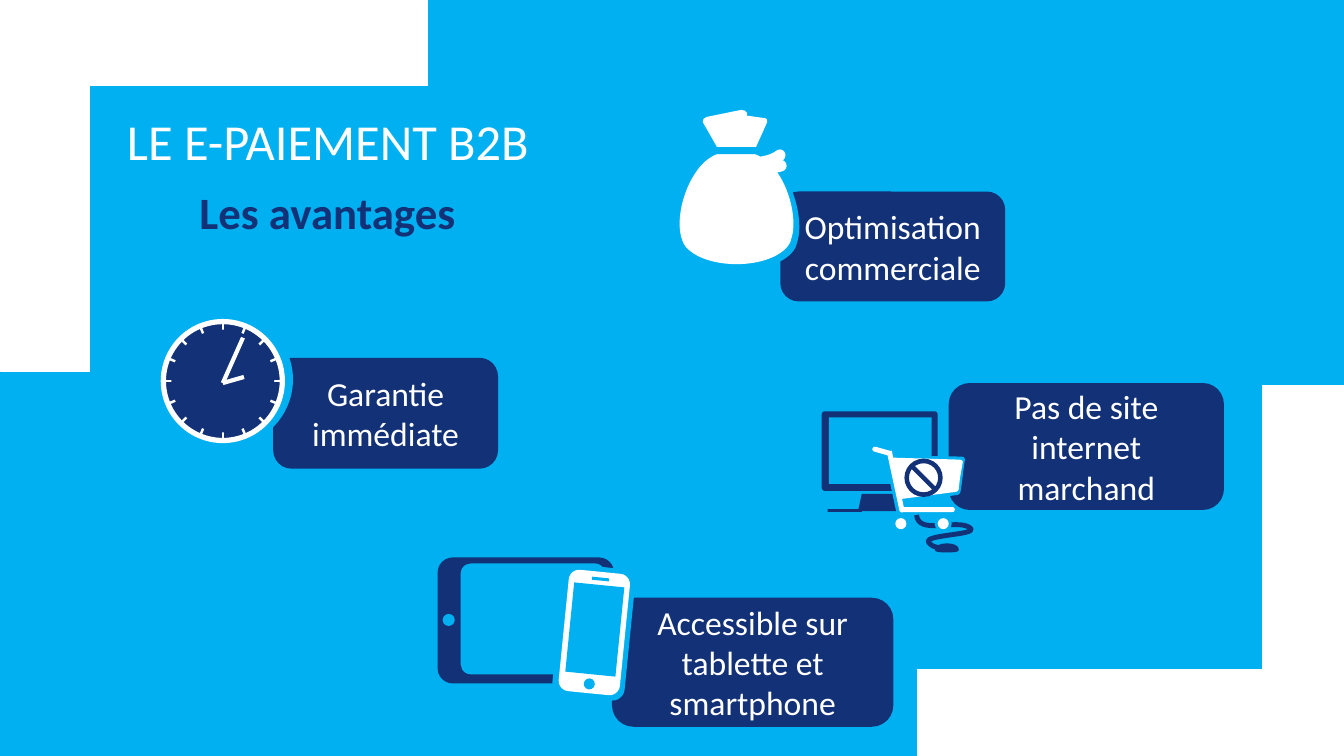
from math import cos, radians, sin

from lxml.etree import SubElement
from pptx import Presentation
from pptx.dml.color import RGBColor
from pptx.enum.shapes import MSO_CONNECTOR, MSO_SHAPE as SH
from pptx.enum.text import MSO_ANCHOR, PP_ALIGN
from pptx.oxml.ns import qn
from pptx.util import Inches, Pt

THEME = {
    "sky": RGBColor(0x00, 0xB0, 0xF0),
    "navy": RGBColor(0x13, 0x31, 0x76),
    "white": RGBColor(0xFF, 0xFF, 0xFF),
    "font": "Calibri",
    "title": Pt(36),
    "subtitle": Pt(32),
    "label": Pt(24),
}
SKY, NAVY, WHITE = THEME["sky"], THEME["navy"], THEME["white"]


def add(parent, kind, x, y, w, h, fill, rot=0, adj=(), line=None, weight=0.5):
    if isinstance(kind, list):
        start, *segs = [[Inches(v) for v in seg] for seg in kind]
        fb = parent.shapes.build_freeform(*start)
        fb.add_line_segments([seg[-2:] for seg in segs], close=fill is not None)
        sp = fb.convert_to_shape()
        left = min(seg[-2] for seg in [start] + segs)
        top = min(seg[-1] for seg in [start] + segs)
        for node, seg in zip(list(sp._element.iter(qn("a:lnTo"))), segs):
            if len(seg) == 6:
                node.remove(node[0])
                curve = SubElement(node.getparent(), qn("a:cubicBezTo"))
                node.getparent().replace(node, curve)
                for a, b in zip(seg[::2], seg[1::2]):
                    SubElement(curve, qn("a:pt"), x=str(a - left), y=str(b - top))
    else:
        sp = parent.shapes.add_shape(kind, Inches(x), Inches(y), Inches(w), Inches(h))
        sp.rotation = rot
        for i, value in enumerate(adj):
            sp.adjustments[i] = value
    sp.shadow.inherit = False
    if fill is None:
        sp.fill.background()
    else:
        sp.fill.solid()
        sp.fill.fore_color.rgb = fill
    if line is None:
        sp.line.fill.background()
    else:
        sp.line.color.rgb = line
        sp.line.width = Pt(weight)
    return sp


def write(sp, text, size, color, bold=False, align=PP_ALIGN.LEFT, anchor=MSO_ANCHOR.MIDDLE):
    tf = sp.text_frame
    tf.word_wrap = True
    tf.vertical_anchor = anchor
    p = tf.paragraphs[0]
    p.alignment = align
    r = p.add_run()
    r.text = text
    r.font.name = THEME["font"]
    r.font.size = size
    r.font.bold = bold
    r.font.color.rgb = color
    return p


prs = Presentation()
prs.slide_width, prs.slide_height = Inches(13.33), Inches(7.5)
s = prs.slides.add_slide(prs.slide_layouts[6])
s.background.fill.solid()
s.background.fill.fore_color.rgb = SKY

corners = ((0, 0, 4.24, 0.85), (12.52, 3.82, 0.81, 3.68), (0, 0, 0.89, 3.68), (9.1, 6.64, 4.23, 0.86))
for box in corners:
    add(s, SH.RECTANGLE, *box, WHITE, line=WHITE)

advantages = (
    ("Accessible sur tablette et smartphone", 6.07, 5.93, 2.79, 1.28),
    ("Pas de site internet marchand", 9.41, 3.8, 2.73, 1.26),
    ("Optimisation commerciale", 7.74, 1.9, 2.23, 1.09),
    ("Garantie immédiate", 2.71, 3.55, 2.23, 1.1),
)
for text, *box in advantages:
    sp = add(s, SH.ROUNDED_RECTANGLE, *box, NAVY)
    write(sp, text, THEME["label"], WHITE, align=PP_ALIGN.CENTER)

tb = s.shapes.add_textbox(Inches(1.16), Inches(1.1), Inches(11.72), Inches(0.67))
p = write(tb, "LE E-PAIEMENT B2B", THEME["title"], WHITE)
p.line_spacing = 0.9
tb = s.shapes.add_textbox(Inches(1.88), Inches(1.84), Inches(3.08), Inches(0.59))
p = write(tb, "Les avantages", THEME["subtitle"], NAVY, bold=True, anchor=MSO_ANCHOR.TOP)
p.line_spacing = 0.9
p.space_before = Pt(10)

bag_parts = (
    (SH.BLOCK_ARC, 6.76, 2.06, 1.09, 0.56, 180, (110.97, 212.13, 0.5)),
    (SH.BLOCK_ARC, 6.52, 1.79, 0.97, 0.46, 287.7, (107.18, 212.13, 0.5)),
    (SH.BLOCK_ARC, 7.12, 1.79, 0.97, 0.46, 72.3, (111.87, 0.82, 0.5)),
    (SH.BLOCK_ARC, 6.86, 1.49, 0.88, 0.79, 0, (108, 2.25, 0.21)),
    (SH.TRAPEZOID, 6.86, 1.56, 0.88, 0.87, 0, ()),
)
bag_flaps = (
    [(6.97, 1.21), (6.97, 1.19, 6.98, 1.16, 7.01, 1.16), (7.35, 1.09), (7.38, 1.09, 7.4, 1.1, 7.41, 1.12),
     (7.38, 1.44), (7.38, 1.46, 7.34, 1.49, 7.32, 1.49), (7.2, 1.51), (7.17, 1.52, 7.14, 1.51, 7.13, 1.49),
     (6.97, 1.21)],
    [(7.17, 1.16), (7.17, 1.14, 7.2, 1.12, 7.22, 1.12), (7.57, 1.17), (7.6, 1.17, 7.62, 1.19, 7.61, 1.21),
     (7.48, 1.5), (7.48, 1.53, 7.44, 1.54, 7.41, 1.54), (7.29, 1.52), (7.26, 1.51, 7.23, 1.5, 7.23, 1.47),
     (7.17, 1.16)],
)
bag_ties = ((7.09, 1.33, 7.24), (7.21, 1.38, 18.85))
for color, k, shift in ((SKY, 1.09, (-0.65, -0.17)), (WHITE, 1, (0, 0))):
    dx, dy = shift
    bag = s.shapes.add_group_shape()
    for kind, x, y, w, h, rot, adj in bag_parts:
        add(bag, kind, k * x + dx, k * y + dy, k * w, k * h, color, rot, adj)
    for flap in bag_flaps:
        outline = [tuple(k * v + shift[i % 2] for i, v in enumerate(seg)) for seg in flap]
        add(bag, outline, 0, 0, 0, 0, color)
    add(bag, SH.RECTANGLE, k * 6.86 + dx, k * 1.46 + dy, k * 0.88, 0.07, SKY)
    for x, y, start in bag_ties:
        tie = add(bag, SH.ARC, k * x + dx, k * y + dy, k * 0.68, k * 0.29, SKY if color == SKY else None,
                  0, (start, 63.1), color, 8.25)
        tie._element.spPr.find(qn("a:ln")).set("cap", "rnd")

clock = s.shapes.add_group_shape()
add(clock, SH.OVAL, 1.53, 3.11, 1.35, 1.31, SKY, line=SKY, weight=3.75)
cx, cy, radius = 2.21, 3.78, 0.59
ticks = []
for n in range(8):
    ux, uy = radius * cos(radians(22.5 * n)), radius * sin(radians(22.5 * n))
    ticks.append((cx - ux, cy - uy, cx + ux, cy + uy))
hands = [(2.21, 3.8, 2.41, 3.35), (2.21, 3.8, 2.42, 3.74)]
for size, rim, strokes, weight in ((2 * radius, WHITE, ticks, 1.75), (1.02, None, hands, 3)):
    add(clock, SH.OVAL, cx - size / 2, cy - size / 2, size, size, NAVY, line=rim, weight=3.75)
    for ends in strokes:
        c = clock.shapes.add_connector(MSO_CONNECTOR.STRAIGHT, *map(Inches, ends))
        c.line.color.rgb = WHITE
        c.line.width = Pt(weight)
        SubElement(c._element.spPr, qn("a:effectLst"))

basket_edge = [
    (8.82, 4.54), (8.82, 4.53, 8.84, 4.52, 8.85, 4.52), (9.54, 4.53), (9.56, 4.53, 9.57, 4.54, 9.57, 4.56),
    (9.55, 4.69, 9.55, 4.73, 9.53, 4.86), (9.53, 4.88, 9.52, 4.91, 9.5, 4.91), (8.93, 4.99),
    (8.92, 4.99, 8.91, 4.97, 8.91, 4.95), (8.82, 4.54)]
basket = [
    (8.84, 4.57), (8.84, 4.55, 8.85, 4.54, 8.86, 4.54), (9.52, 4.56), (9.53, 4.56, 9.55, 4.57, 9.55, 4.58),
    (9.53, 4.7, 9.52, 4.73, 9.51, 4.85), (9.51, 4.86, 9.5, 4.88, 9.48, 4.88), (8.94, 4.95),
    (8.93, 4.95, 8.92, 4.94, 8.92, 4.92), (8.84, 4.57)]
cable = [
    (9.09, 5.11), (9.11, 5.31, 9.47, 5.15, 9.61, 5.23), (9.75, 5.31, 9.16, 5.3, 9.21, 5.38),
    (9.26, 5.46, 9.39, 5.42, 9.4, 5.44)]
mouse = [
    (9.27, 5.45), (9.27, 5.42, 9.32, 5.39, 9.39, 5.39), (9.45, 5.39, 9.51, 5.41, 9.51, 5.45),
    (9.52, 5.48, 9.45, 5.48, 9.39, 5.48), (9.32, 5.48, 9.27, 5.48, 9.27, 5.45)]
BAR = SH.ROUND_2_SAME_RECTANGLE
shop_parts = (
    (SH.ROUNDED_RECTANGLE, 8.15, 4.08, 1.15, 0.79, NAVY, 0, (0.04,)),
    (basket_edge, 0, 0, 0, 0, SKY),
    (cable, 0, 0, 0, 0, None, 0, (), NAVY, 3.5),
    (SH.OVAL, 9.27, 5.11, 0.17, 0.17, SKY),
    (SH.RECTANGLE, 8.22, 4.14, 1.02, 0.66, SKY),
    (SH.TRAPEZOID, 8.51, 4.9, 0.39, 0.17, NAVY, 0, (0.22,)),
    (SH.RECTANGLE, 8.21, 5.05, 0.34, 0.03, NAVY),
    (BAR, 9.17, 4.78, 0.05, 0.55, WHITE, 270, (0.5, 0.5)),
    (basket, 0, 0, 0, 0, WHITE),
    (SH.OVAL, 8.88, 5.14, 0.11, 0.11, WHITE),
    (SH.OVAL, 9.3, 5.14, 0.11, 0.11, WHITE),
    (mouse, 0, 0, 0, 0, NAVY),
    (BAR, 8.83, 4.49, 0.05, 0.62, SKY, 167.9, (0.5, 0)),
    (BAR, 8.72, 4.38, 0.05, 0.19, WHITE, 285.8, (0.5, 0)),
    (BAR, 8.86, 4.47, 0.05, 0.62, WHITE, 167.9, (0.5, 0)),
)
device_parts = (
    (SH.ROUNDED_RECTANGLE, 4.34, 5.53, 1.75, 1.25, NAVY, 0, (0.12,)),
    (SH.ROUNDED_RECTANGLE, 5.53, 5.62, 0.72, 1.31, SKY, 5.7, (0.17,)),
    (SH.ROUNDED_RECTANGLE, 4.57, 5.59, 1.43, 1.1, SKY, 0, (0.09,)),
    (SH.OVAL, 4.39, 6.09, 0.12, 0.12, SKY),
    (SH.ROUNDED_RECTANGLE, 5.59, 5.67, 0.61, 1.21, WHITE, 5.7, (0.17,)),
    (SH.ROUNDED_RECTANGLE, 5.87, 5.73, 0.17, 0.03, SKY, 5.7),
    (SH.OVAL, 5.79, 6.73, 0.11, 0.11, SKY, 5.7),
    (SH.RECTANGLE, 5.65, 5.8, 0.5, 0.89, SKY, 5.7),
)
for parts in (shop_parts, device_parts):
    icon = s.shapes.add_group_shape()
    for part in parts:
        add(icon, *part)
add(s, SH.NO_SYMBOL, 8.97, 4.55, 0.38, 0.38, NAVY, adj=(0.12,))

prs.save("out.pptx")
